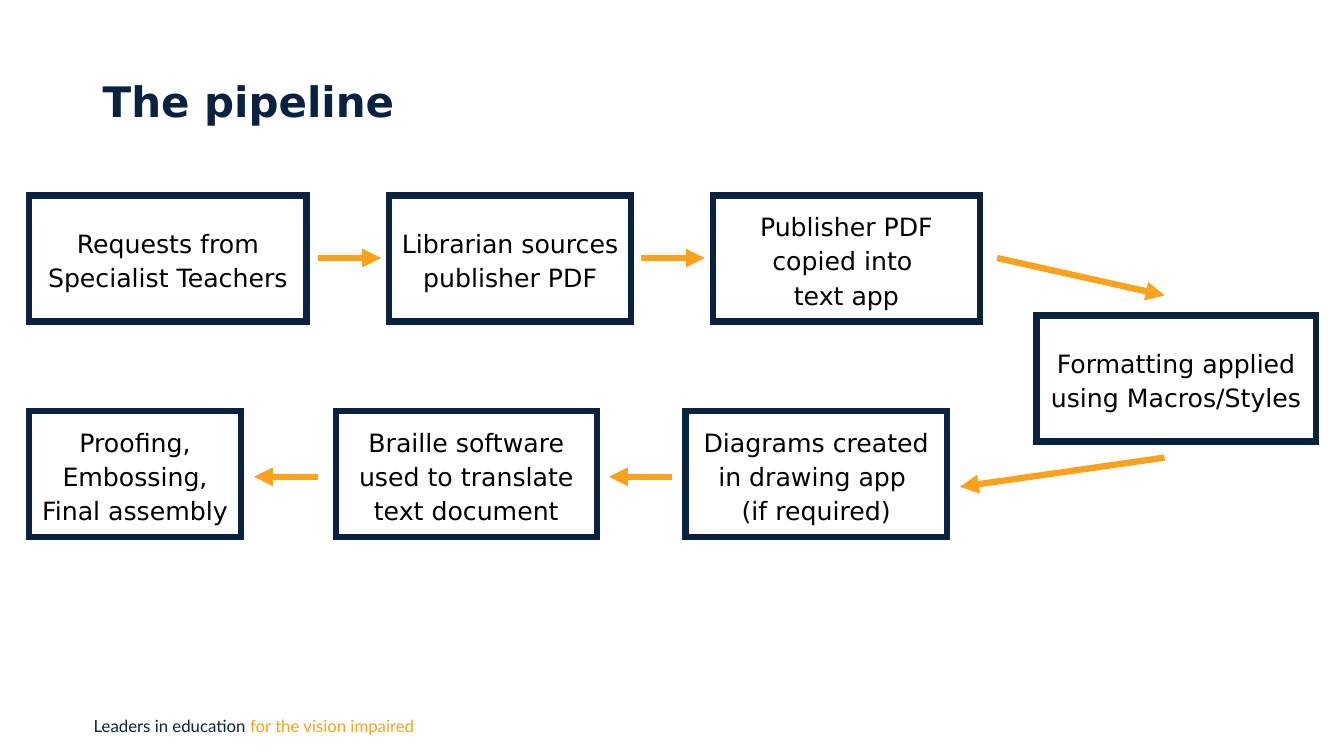
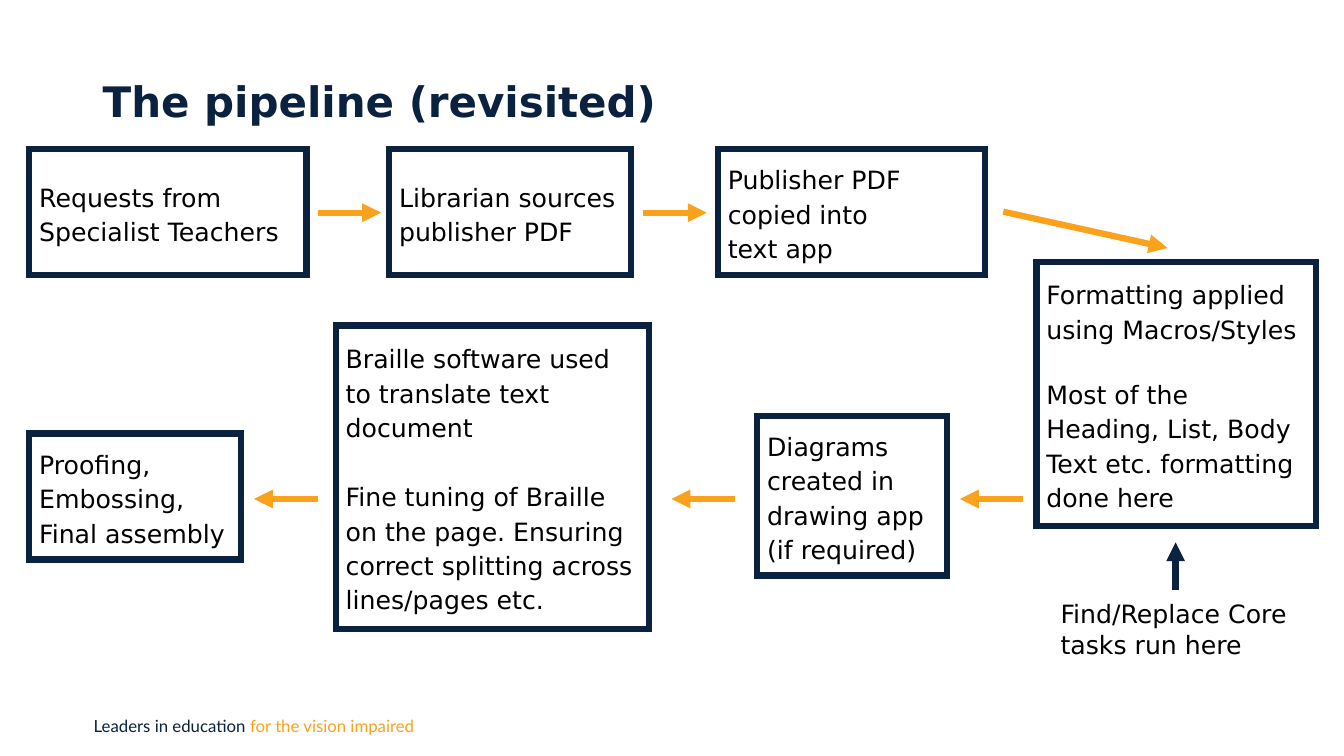
from dataclasses import dataclass

from lxml import etree
from pptx import Presentation
from pptx.dml.color import RGBColor
from pptx.enum import shapes, text
from pptx.oxml import ns
from pptx.util import Inches, Pt

INK = {"navy": "0A2240", "gold": "FAA21B", "black": "000000", "white": "FFFFFF"}
BODY = "DejaVu Sans"
LEFT, HIGH = 0.29, 1.25  # left margin and usual box height
LINE = 4.5


@dataclass
class Box:
    x: float
    y: float
    w: float
    text: str
    h: float = HIGH
    gap: float = 0


@dataclass
class Arrow:
    x1: float
    y1: float
    x2: float
    y2: float
    ink: str = "gold"


def rgb(name: str) -> RGBColor:
    return RGBColor.from_string(INK[name])


def write(frame, words: str, *, size: float = 18, font: str = BODY,
          ink: str = "black", bold: bool = False, align=text.PP_ALIGN.LEFT,
          anchor=text.MSO_ANCHOR.TOP, lead: float = 1, gap: float = 0,
          tail: str = "", tint: str = "gold") -> None:
    """Fill a frame; newlines part paragraphs, and tail is a tinted ending."""
    frame.word_wrap = True
    frame.vertical_anchor = anchor
    for i, line in enumerate(words.split("\n")):
        para = frame.add_paragraph() if i else frame.paragraphs[0]
        para.text = line
        para.alignment, para.line_spacing = align, lead
        if i:
            para.space_before = Pt(gap)
        for run in para.runs:
            style(run.font, size, font, ink, bold)
    if tail:
        run = para.add_run()
        run.text = tail
        style(run.font, size, font, tint, bold)


def style(face, size: float, font: str, ink: str, bold: bool) -> None:
    face.size, face.name, face.bold = Pt(size), font, bold
    face.color.rgb = rgb(ink)


def label(slide, x: float, y: float, w: float, h: float, words: str, **form):
    area = slide.shapes.add_textbox(Inches(x), Inches(y), Inches(w), Inches(h))
    write(area.text_frame, words, **form)
    return area.text_frame


def stroke(shape, ink: str, tag: str, **traits: str) -> None:
    """Set the outline and add one more detail to it."""
    shape.line.color.rgb = rgb(ink)
    shape.line.width = Pt(LINE)
    edge = shape._element.spPr.find(ns.qn("a:ln"))
    etree.SubElement(edge, ns.qn(tag), **traits)


def draw_box(slide, box: Box, align) -> None:
    shape = slide.shapes.add_shape(
        shapes.MSO_SHAPE.RECTANGLE,
        Inches(box.x), Inches(box.y), Inches(box.w), Inches(box.h))
    shape.shadow.inherit = False
    shape.fill.solid()
    shape.fill.fore_color.rgb = rgb("white")
    stroke(shape, "navy", "a:miter", lim="800000")
    write(shape.text_frame, box.text, align=align, lead=1.14, gap=box.gap,
          anchor=text.MSO_ANCHOR.MIDDLE)


def draw_arrow(slide, arrow: Arrow) -> None:
    link = slide.shapes.add_connector(
        shapes.MSO_CONNECTOR.STRAIGHT, Inches(arrow.x1), Inches(arrow.y1),
        Inches(arrow.x2), Inches(arrow.y2))
    stroke(link, arrow.ink, "a:tailEnd", type="triangle")
    etree.SubElement(link._element.spPr, ns.qn("a:effectLst"))


def flow(deck, title: str, boxes: list[Box], arrows: list[Arrow], align):
    """Add a slide with title, footer, boxes and arrows."""
    slide = deck.slides.add_slide(deck.slide_layouts[6])
    foot = label(slide, 0.93, 7.09, 3.4, 0.21, "Leaders in education ",
                 size=12, font="Lato", ink="navy",
                 anchor=text.MSO_ANCHOR.MIDDLE, tail="for the vision impaired")
    foot.margin_left = foot.margin_right = foot.margin_bottom = 0
    foot.margin_top = Inches(0.01)
    label(slide, 0.92, 0.76, 11.5, 0.89, title,
          size=30, ink="navy", bold=True, lead=0.9)
    for box in boxes:
        draw_box(slide, box, align)
    for arrow in arrows:
        draw_arrow(slide, arrow)
    return slide


# Wording shared by both slides
ASK = "Requests from Specialist Teachers"
FIND = "Librarian sources publisher PDF"
COPY = "Publisher PDF copied into \vtext app"
FORM = "Formatting applied using Macros/Styles"
ART = "Diagrams created in drawing app \v(if required)"
TURN = "Braille software used to translate text document"
LAST = "Proofing, Embossing, Final assembly"


def top_row(y: float, x: float) -> list[Box]:
    return [Box(LEFT, y, 2.75, ASK), Box(3.86, y, 2.4, FIND), Box(x, y, 2.65, COPY)]


def level(y: float, x: float, way: int = 1) -> Arrow:
    """Short level arrow; way is 1 for right and -1 for left."""
    return Arrow(x, y, x + way * 0.63, y)


def main() -> None:
    deck = Presentation()
    deck.slide_width, deck.slide_height = Inches(13.33), Inches(7.5)

    # The pipeline
    low = 4.08
    flow(deck, "The pipeline",
         top_row(1.94, 7.07) + [
             Box(10.28, 3.13, 2.77, FORM), Box(6.8, low, 2.59, ART),
             Box(3.33, low, 2.59, TURN), Box(LEFT, low, 2.1, LAST)],
         [level(2.56, 3.15), level(2.56, 6.36), Arrow(9.89, 2.56, 11.55, 2.93),
          Arrow(11.55, 4.54, 9.52, 4.83),
          level(4.73, 6.67, -1), level(4.73, 3.15, -1)],
         text.PP_ALIGN.CENTER)

    # The pipeline, with details
    most = "\nMost of the Heading, List, Body Text etc. formatting done here"
    fine = ("\nFine tuning of Braille on the page. "
            "Ensuring correct splitting across lines/pages etc.")
    slide = flow(
        deck, "The pipeline (revisited)",
        top_row(1.48, 7.12) + [
            Box(10.28, 2.6, 2.77, FORM + most, 2.62, 22),
            Box(7.51, 4.13, 1.88, ART, 1.58),
            Box(3.33, 3.23, 3.11, TURN + fine, 3.01, 24.5),
            Box(LEFT, 4.3, 2.1, LAST)],
        [level(2.11, 3.15), level(2.11, 6.38), Arrow(9.95, 2.1, 11.58, 2.46),
         *(level(4.95, x, -1) for x in (10.15, 7.29, 3.15)),
         Arrow(11.66, 5.85, 11.66, 5.38, "navy")],
        text.PP_ALIGN.LEFT)
    label(slide, 10.42, 5.89, 2.48, 0.71, "Find/Replace Core tasks run here")

    deck.save("out.pptx")


if __name__ == "__main__":
    main()
